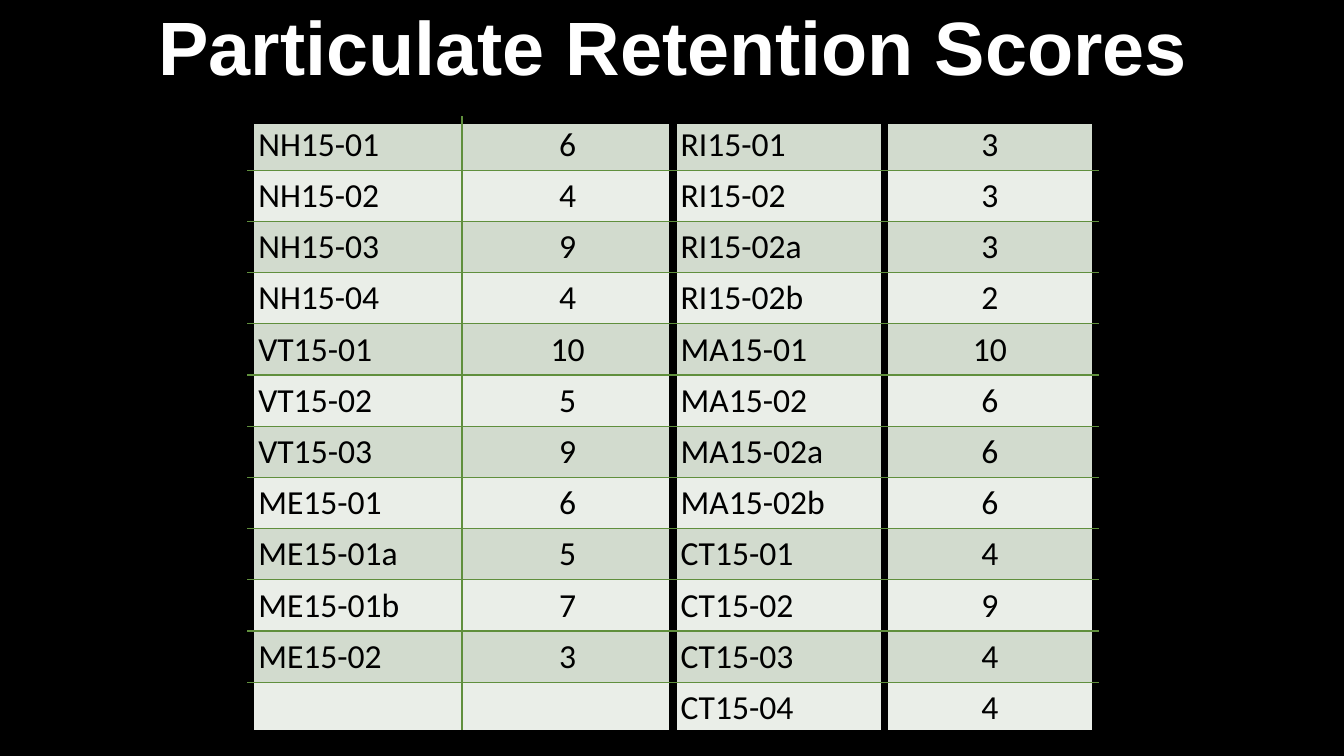
from dataclasses import dataclass

import pptx
import pptx.util
from pptx.dml.color import RGBColor
from pptx.enum.text import MSO_ANCHOR, MSO_AUTO_SIZE, PP_ALIGN
from pptx.oxml.ns import qn
from lxml import etree
from pptx.util import Cm


@dataclass(frozen=True)
class Theme:
    background: str = "000000"
    title: str = "FFFFFF"
    text: str = "000000"
    bands: tuple = ("D2DBCE", "EAEEE8")
    thin: tuple = ("608F3D", 1)
    thick: tuple = ("000000", 6)
    title_font: str = "Arial"
    body_font: str = "Calibri"
    title_size: int = 54
    body_size: int = 24


THEME = Theme()

LEFT_SCORES = [
    ("NH15-01", "6"), ("NH15-02", "4"), ("NH15-03", "9"), ("NH15-04", "4"),
    ("VT15-01", "10"), ("VT15-02", "5"), ("VT15-03", "9"), ("ME15-01", "6"),
    ("ME15-01a", "5"), ("ME15-01b", "7"), ("ME15-02", "3"), ("", ""),
]
RIGHT_SCORES = [
    ("RI15-01", "3"), ("RI15-02", "3"), ("RI15-02a", "3"), ("RI15-02b", "2"),
    ("MA15-01", "10"), ("MA15-02", "6"), ("MA15-02a", "6"), ("MA15-02b", "6"),
    ("CT15-01", "4"), ("CT15-02", "9"), ("CT15-03", "4"), ("CT15-04", "4"),
]


def set_font(p, name, size, color, bold=False):
    p.font.name = name
    p.font.size = pptx.util.Pt(size)
    p.font.bold = bold
    p.font.color.rgb = RGBColor.from_string(color)


def add_title(s, text):
    sp = s.shapes.title
    sp.left, sp.top, sp.width, sp.height = Cm(2.36), Cm(0), Cm(29.21), Cm(2.59)
    tf = sp.text_frame
    tf.text = text
    tf.word_wrap = True
    tf.auto_size = MSO_AUTO_SIZE.NONE
    tf.vertical_anchor = MSO_ANCHOR.MIDDLE
    p = tf.paragraphs[0]
    p.alignment = PP_ALIGN.CENTER
    p.line_spacing = 0.9
    set_font(p, THEME.title_font, THEME.title_size, THEME.title, bold=True)


def add_border(cell, side, line):
    color, width = line
    tcPr = cell._tc.get_or_add_tcPr()
    ln = etree.SubElement(tcPr, qn(f"a:ln{side}"), w=str(pptx.util.Pt(width)))
    fill = etree.SubElement(ln, qn("a:solidFill"))
    etree.SubElement(fill, qn("a:srgbClr"), val=color)


def format_cell(cell, text, fill, borders, centered):
    for side, line in borders.items():
        add_border(cell, side, line)
    cell.fill.solid()
    cell.fill.fore_color.rgb = RGBColor.from_string(fill)
    cell.margin_left = cell.margin_right = Cm(0.19)
    cell.margin_top, cell.margin_bottom = Cm(0), Cm(0.12)
    cell.vertical_anchor = MSO_ANCHOR.BOTTOM
    cell.text = text
    p = cell.text_frame.paragraphs[0]
    p.alignment = PP_ALIGN.CENTER if centered else PP_ALIGN.LEFT
    set_font(p, THEME.body_font, THEME.body_size, THEME.text)


def add_score_table(s, rows):
    n_rows, n_cols = len(rows), len(rows[0])
    frame = s.shapes.add_table(n_rows, n_cols, Cm(6.32), Cm(3.02),
                               Cm(21.29), Cm(15.46))
    table = frame.table
    table.first_row = table.horz_banding = False
    for column in table.columns:
        column.width = Cm(21.29 / n_cols)
    for i, row in enumerate(rows):
        table.rows[i].height = Cm(1.29 if i else 1.27)
        for j, text in enumerate(row):
            borders = {
                "L": THEME.thin if j == 1 else THEME.thick,
                "R": THEME.thin if j == 0 else THEME.thick,
                "T": THEME.thin if i else THEME.thick,
                "B": THEME.thin if i < n_rows - 1 else THEME.thick,
            }
            format_cell(table.cell(i, j), text, THEME.bands[i % 2], borders,
                        centered=j % 2 == 1)


def main():
    prs = pptx.Presentation()
    prs.slide_width, prs.slide_height = Cm(33.87), Cm(19.05)
    s = prs.slides.add_slide(prs.slide_layouts[5])
    s.background.fill.solid()
    s.background.fill.fore_color.rgb = RGBColor.from_string(THEME.background)
    add_title(s, "Particulate Retention Scores")
    add_score_table(s, [a + b for a, b in zip(LEFT_SCORES, RIGHT_SCORES)])
    prs.save("out.pptx")


if __name__ == "__main__":
    main()
